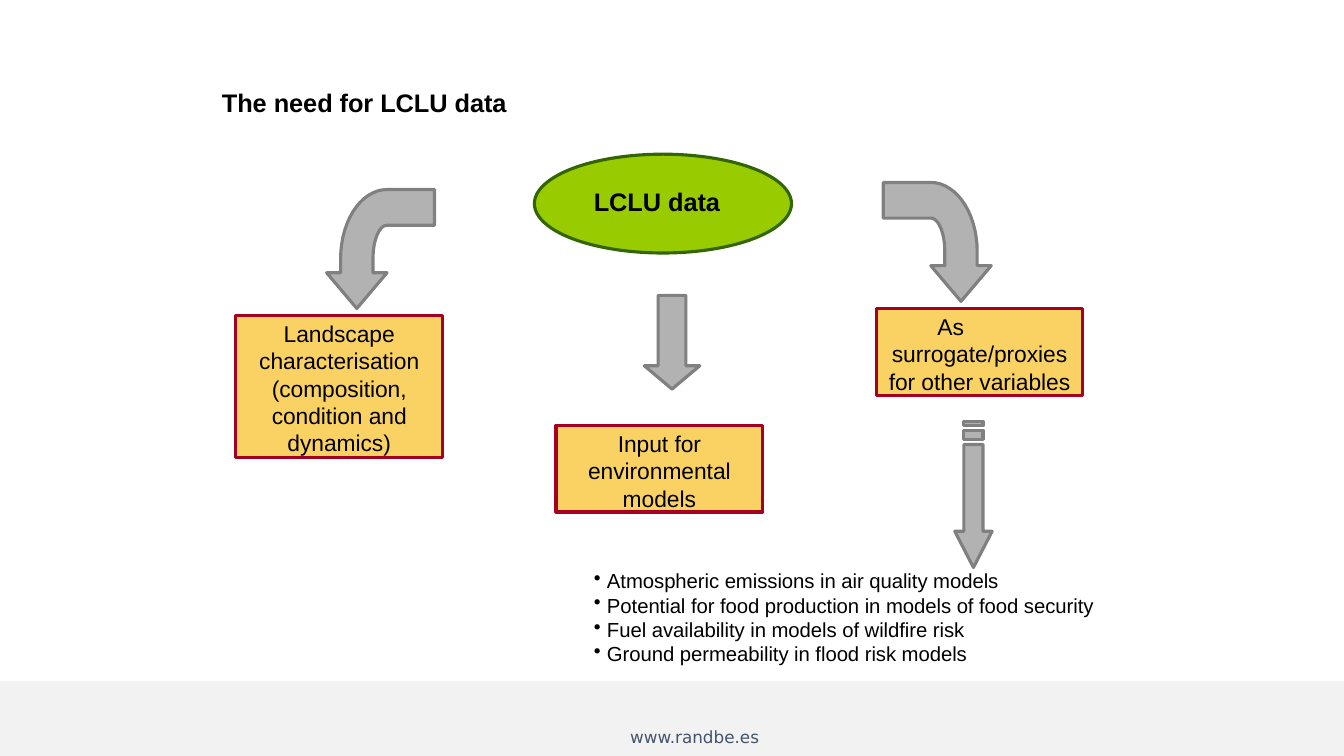
import math

import pptx
import pptx.dml.color
import pptx.enum.shapes
import pptx.enum.text
import pptx.oxml.ns
import pptx.util
from lxml import etree

RGB = pptx.dml.color.RGBColor
BLACK, SLATE, PALE = RGB(0, 0, 0), RGB(0x44, 0x54, 0x6A), RGB(0xF2, 0xF2, 0xF2)
LIME, FOREST = RGB(0x99, 0xCC, 0x00), RGB(0x33, 0x66, 0x00)
SAND, CRIMSON = RGB(0xFA, 0xD2, 0x64), RGB(0xA5, 0x00, 0x21)
SILVER, GREY = RGB(0xB2, 0xB2, 0xB2), RGB(0x80, 0x80, 0x80)
KIND = pptx.enum.shapes.MSO_SHAPE
ALIGN = pptx.enum.text.PP_ALIGN
ANCHOR = pptx.enum.text.MSO_ANCHOR

# Content; places are left, top, width, height in percent of the slide
TITLE = "The need for LCLU data"
TITLE_AREA = (16.51, 11.47, 78.32, 4.13)
SOURCE = "LCLU data"
SOURCE_AREA = (39.76, 20.4, 19.13, 13.07)
USES = [  # lines, top, height
    (["Landscape characterisation (composition, condition and dynamics)"], 41.73, 18.8),
    (["Input for environmental models"], 56.27, 11.47),
    (["As", "surrogate/proxies for other variables"], 40.8, 11.47),
]
USE_LEFT, USE_STEP, USE_WIDTH = 17.55, 23.82, 15.38
PROXIES = [
    "Atmospheric emissions in air quality models",
    "Potential for food production in models of food security",
    "Fuel availability in models of wildfire risk",
    "Ground permeability in flood risk models",
]
PROXIES_AREA = (44.11, 75.2, 37.66, 13.07)
FOOTER = "www.randbe.es"
FOOTER_BAND = (0, 90.13, 100, 9.87)
FOOTER_AREA = (46.89, 95.4, 12, 4)
BENT_ARROWS = [(32.33, 25.07, -1), (65.72, 24.13, 1)]  # tail x, top, direction
BENT_SIZE = (8.03, 15.73)
DOWN_ARROWS = [  # area, stem share, head share
    ((47.94, 39.07, 4.13, 12.4), 0.5, 0.42),
    ((71.04, 58.8, 2.78, 16.27), 0.51, 0.97),
]
STRIPES = [(71.72, 56.93, 1.43, 1.2), (71.72, 55.73, 1.43, 0.6)]

deck = pptx.Presentation()
deck.slide_width = pptx.util.Inches(13.33)
deck.slide_height = pptx.util.Inches(7.5)
slide = deck.slides.add_slide(deck.slide_layouts[6])


def across(share):
    return round(deck.slide_width * share / 100)


def down(share):
    return round(deck.slide_height * share / 100)


def place(area):
    left, top, width, height = area
    return across(left), down(top), across(width), down(height)


def paint(shape, fill, line, width=2.25):
    shape.shadow.inherit = False
    shape.fill.solid()
    shape.fill.fore_color.rgb = fill
    shape.line.color.rgb = line
    shape.line.width = pptx.util.Pt(width)
    etree.SubElement(shape.line._get_or_add_ln(), pptx.oxml.ns.qn("a:round"))
    return shape


def add_preset(kind, area, fill, line, width=2.25):
    return paint(slide.shapes.add_shape(kind, *place(area)), fill, line, width)


def write(shape, lines, size, color=BLACK, font="Arial", bold=False, align=ALIGN.LEFT,
          anchor=ANCHOR.TOP, insets=(0, 0, 0, 0), tracking=-5, bullet=None):
    frame = shape.text_frame
    frame.word_wrap = True
    frame.vertical_anchor = anchor
    (frame.margin_left, frame.margin_top,
     frame.margin_right, frame.margin_bottom) = map(pptx.util.Inches, insets)
    for index, line in enumerate(lines):
        paragraph = frame.paragraphs[0] if index == 0 else frame.add_paragraph()
        paragraph.alignment = align
        if bullet:
            properties = paragraph._p.get_or_add_pPr()
            properties.set("marL", str(pptx.util.Inches(0.14)))
            properties.set("indent", str(-pptx.util.Inches(0.13)))
            etree.SubElement(properties, pptx.oxml.ns.qn("a:buChar"), char=bullet)
        run = paragraph.add_run()
        run.text = line
        run.font.size = pptx.util.Pt(size)
        run.font.name = font
        run.font.bold = bold
        run.font.color.rgb = color
        run._r.get_or_add_rPr().set("spc", str(tracking))
    return frame


def add_text(area, lines, size, **style):
    return write(slide.shapes.add_textbox(*place(area)), lines, size, **style)


def quarter(rx, ry, angles):
    """Points of a quarter ellipse round the bend's centre."""
    return [(0.44 + rx * math.sin(math.radians(a)), 0.58 - ry * math.cos(math.radians(a)))
            for a in angles]


def add_bent_arrow(tail, top, direction):
    outline = [(0, 0), *quarter(0.43, 0.58, range(0, 91, 6)),
               (0.87, 0.7), (1, 0.7), (0.72, 1), (0.44, 0.7), (0.57, 0.7),
               *quarter(0.13, 0.28, range(90, -1, -6)), (0, 0.3)]
    width, height = BENT_SIZE
    points = [(across(tail + direction * x * width), down(top + y * height))
              for x, y in outline]
    builder = slide.shapes.build_freeform(*points[0])
    builder.add_line_segments(points[1:], close=True)
    paint(builder.convert_to_shape(), SILVER, GREY)


# Footer
add_preset(KIND.RECTANGLE, FOOTER_BAND, PALE, PALE, 1)
add_text(FOOTER_AREA, [FOOTER], 12, color=SLATE, font="DejaVu Sans",
         anchor=ANCHOR.MIDDLE, tracking=0)

# Title and the source of all uses
add_text(TITLE_AREA, [TITLE], 18.1, bold=True, anchor=ANCHOR.MIDDLE)
write(add_preset(KIND.OVAL, SOURCE_AREA, LIME, FOREST), [SOURCE], 18.1, bold=True,
      align=ALIGN.CENTER, anchor=ANCHOR.MIDDLE, insets=(0, 0, 0.12, 0.04))

# Uses
for column, (lines, top, height) in enumerate(USES):
    area = (USE_LEFT + column * USE_STEP, top, USE_WIDTH, height)
    frame = write(add_preset(KIND.RECTANGLE, area, SAND, CRIMSON), lines, 16.3,
                  align=ALIGN.CENTER, insets=(0.1, 0.04, 0.1, 0))
    if len(lines) > 1:  # the short lead-in stands left of centre
        lead = frame.paragraphs[0]
        lead.alignment = ALIGN.LEFT
        lead._p.get_or_add_pPr().set("marL", str(pptx.util.Inches(0.51)))

# Arrows
for bend in BENT_ARROWS:
    add_bent_arrow(*bend)
for area, stem, head in DOWN_ARROWS:
    arrow = add_preset(KIND.DOWN_ARROW, area, SILVER, GREY)
    arrow.adjustments[0] = stem
    arrow.adjustments[1] = head
for stripe in STRIPES:
    add_preset(KIND.RECTANGLE, stripe, SILVER, GREY)

# Proxy variables
add_text(PROXIES_AREA, PROXIES, 14.5, bullet="•")

deck.save("out.pptx")
